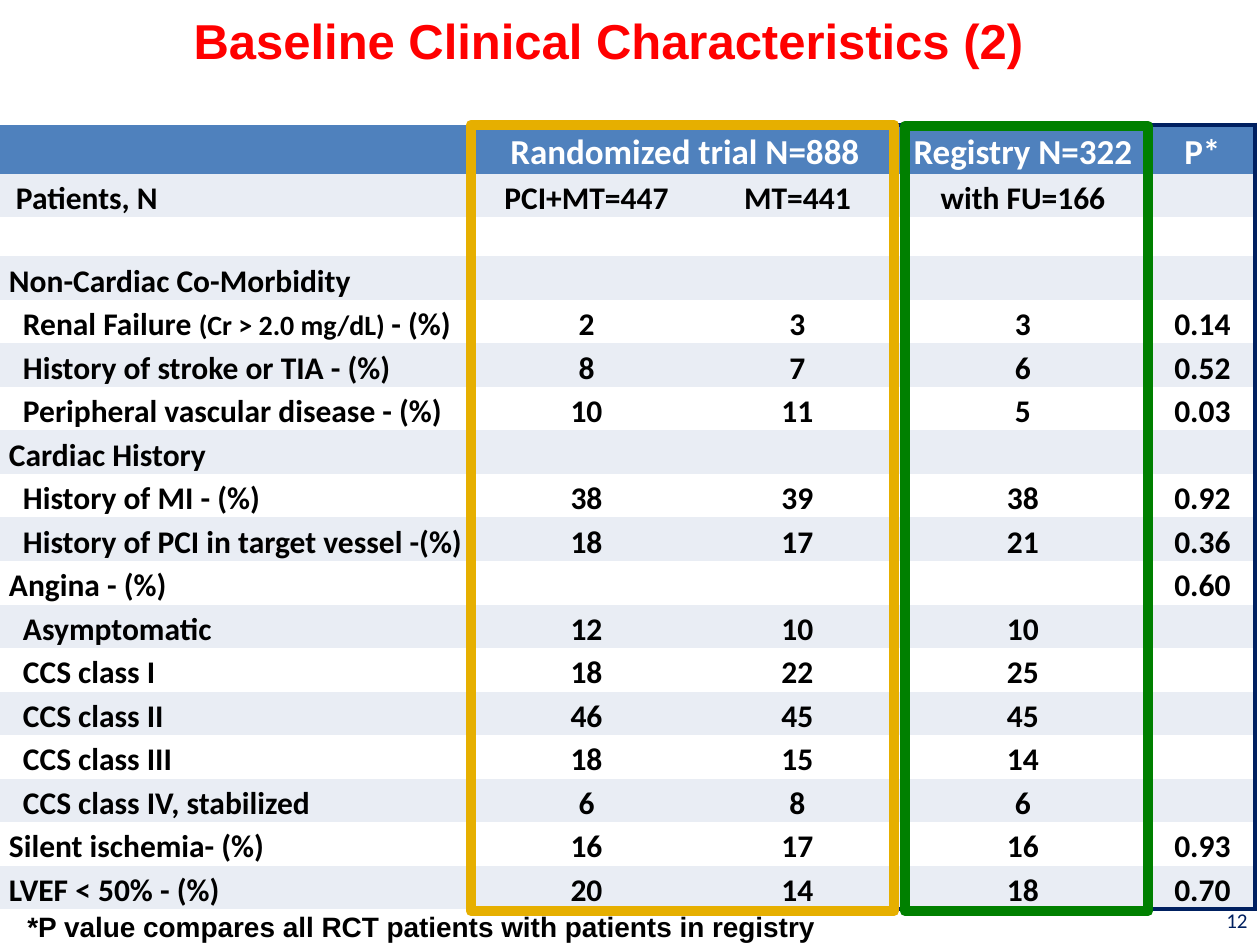
from dataclasses import dataclass
from typing import NamedTuple

from lxml.etree import SubElement
from pptx import Presentation
from pptx.dml.color import RGBColor
from pptx.enum.shapes import MSO_SHAPE
from pptx.enum.text import MSO_ANCHOR, MSO_AUTO_SIZE, PP_ALIGN
from pptx.oxml.ns import qn
from pptx.util import Emu, Pt


@dataclass(frozen=True)
class Theme:
    red: str = "FF0000"
    blue: str = "4F81BD"
    pale: str = "E9EDF4"
    white: str = "FFFFFF"
    black: str = "000000"
    navy: str = "002060"
    gold: str = "E6AF00"
    green: str = "008000"
    sans: str = "Arial"
    body: str = "Calibri"
    title: int = 28
    head: int = 20
    cell: int = 18
    note: int = 16
    page: int = 12
    edge: int = 3
    frame: int = 6


class Box(NamedTuple):
    left: int
    top: int
    width: int
    height: int


class Row(NamedTuple):
    label: str
    vals: tuple = ("", "", "", "")
    dent: int = 0


class Frame(NamedTuple):
    box: Box
    color: str


T = Theme()
SCALE = 914400 / 126
STEP = 14
PLAIN = "{2D5ABB26-0587-4C30-8999-92F81FD0307C}"
COLS = (474, 225, 197, 254, 105)
TALL = {0: 49, 2: 39}
ROWS = (
    Row("", ("Randomized trial N=888", "", "Registry N=322", "P*")),
    Row("Patients, N", ("PCI+MT=447", "MT=441", "with FU=166", ""), STEP // 2),
    Row(""),
    Row("Non-Cardiac Co-Morbidity"),
    Row("Renal Failure |(Cr > 2.0 mg/dL) |- (%)", ("2", "3", "3", "0.14"), STEP),
    Row("History of stroke or TIA - (%)", ("8", "7", "6", "0.52"), STEP),
    Row("Peripheral vascular disease - (%)", ("10", "11", "5", "0.03"), STEP),
    Row("Cardiac History"),
    Row("History of MI - (%)", ("38", "39", "38", "0.92"), STEP),
    Row("History of PCI in target vessel -(%)", ("18", "17", "21", "0.36"), STEP),
    Row("Angina - (%)", ("", "", "", "0.60")),
    Row("Asymptomatic", ("12", "10", "10", ""), STEP),
    Row("CCS class I", ("18", "22", "25", ""), STEP),
    Row("CCS class II", ("46", "45", "45", ""), STEP),
    Row("CCS class III", ("18", "15", "14", ""), STEP),
    Row("CCS class IV, stabilized", ("6", "8", "6", ""), STEP),
    Row("Silent ischemia- (%)", ("16", "17", "16", "0.93")),
    Row("LVEF < 50% - (%)", ("20", "14", "18", "0.70")),
)
FRAMES = (
    Frame(Box(471, 125, 423, 786), T.gold),
    Frame(Box(905, 126, 243, 785), T.green),
)


def px(num: int) -> Emu:
    return Emu(round(num * SCALE))


def spot(box: Box) -> tuple:
    return tuple(px(num) for num in box)


def put(body, text: str, size: int = T.cell, alt: int = T.note,
        font: str = T.body, color: str = T.black, bold: bool = True,
        align=PP_ALIGN.LEFT, space: float = 1.0, dent: int = 0) -> None:
    para = body.paragraphs[0]
    para.alignment = align
    para.line_spacing = space
    if dent:
        para._p.get_or_add_pPr().set("marL", str(px(dent)))
    for num, part in enumerate(text.split("|")):
        run = para.add_run()
        run.text = part
        run.font.size = Pt(alt if num % 2 else size)
        run.font.name = font
        run.font.bold = bold
        run.font.color.rgb = RGBColor.from_string(color)


def edge(cell, side: str) -> None:
    line = SubElement(cell._tc.get_or_add_tcPr(), qn(f"a:ln{side}"),
                      w=str(Pt(T.edge)))
    fill = SubElement(line, qn("a:solidFill"))
    SubElement(fill, qn("a:srgbClr"), val=T.navy)


def style(cell, row: int, col: int) -> None:
    cell.margin_left = cell.margin_right = px(9)
    cell.margin_top = cell.margin_bottom = 0
    cell.vertical_anchor = MSO_ANCHOR.TOP if row else MSO_ANCHOR.MIDDLE
    if col == len(COLS) - 1:
        edge(cell, "R")
    if col and row == 0:
        edge(cell, "T")
    if col and row == len(ROWS) - 1:
        edge(cell, "B")
    shade = T.pale if row % 2 else T.white
    cell.fill.solid()
    cell.fill.fore_color.rgb = RGBColor.from_string(shade if row else T.blue)


def grid(slide, box: Box) -> None:
    table = slide.shapes.add_table(len(ROWS), len(COLS), *spot(box)).table
    table._tbl.tblPr.find(qn("a:tableStyleId")).text = PLAIN
    for col, width in enumerate(COLS):
        table.columns[col].width = px(width)
    for num, row in enumerate(ROWS):
        table.rows[num].height = px(TALL.get(num, 43))
        for col, text in enumerate((row.label, *row.vals)):
            cell = table.cell(num, col)
            style(cell, num, col)
            if text:
                put(cell.text_frame, text, space=1.15,
                    size=T.cell if num else T.head,
                    color=T.black if num else T.white,
                    align=PP_ALIGN.CENTER if col else PP_ALIGN.LEFT,
                    dent=0 if col else row.dent)
    table.cell(0, 1).merge(table.cell(0, 2))


def outline(slide, item: Frame) -> None:
    shape = slide.shapes.add_shape(MSO_SHAPE.RECTANGLE, *spot(item.box))
    shape.shadow.inherit = False
    shape.fill.background()
    shape.line.color.rgb = RGBColor.from_string(item.color)
    shape.line.width = Pt(T.frame)


def label(slide, box: Box, text: str, anchor=MSO_ANCHOR.TOP, **form) -> None:
    body = slide.shapes.add_textbox(*spot(box)).text_frame
    body.word_wrap = True
    body.vertical_anchor = anchor
    put(body, text, **form)


def main() -> None:
    deck = Presentation()
    deck.slide_width, deck.slide_height = px(1260), px(945)
    slide = deck.slides.add_slide(deck.slide_layouts[5])
    title = slide.shapes.title
    title.left, title.top, title.width, title.height = spot(Box(181, 4, 880, 72))
    title.text_frame.auto_size = MSO_AUTO_SIZE.SHAPE_TO_FIT_TEXT
    put(title.text_frame, "Baseline Clinical Characteristics (2)",
        size=T.title, font=T.sans, color=T.red)
    grid(slide, Box(0, 125, 1255, 784))
    label(slide, Box(966, 895, 294, 50), "12", MSO_ANCHOR.MIDDLE,
          size=T.page, color=T.navy, bold=False, align=PP_ALIGN.RIGHT)
    for item in FRAMES:
        outline(slide, item)
    label(slide, Box(15, 903, 1012, 47),
          "*P value compares all RCT patients with patients in registry",
          size=T.note, font=T.sans)
    deck.save("out.pptx")


if __name__ == "__main__":
    main()
